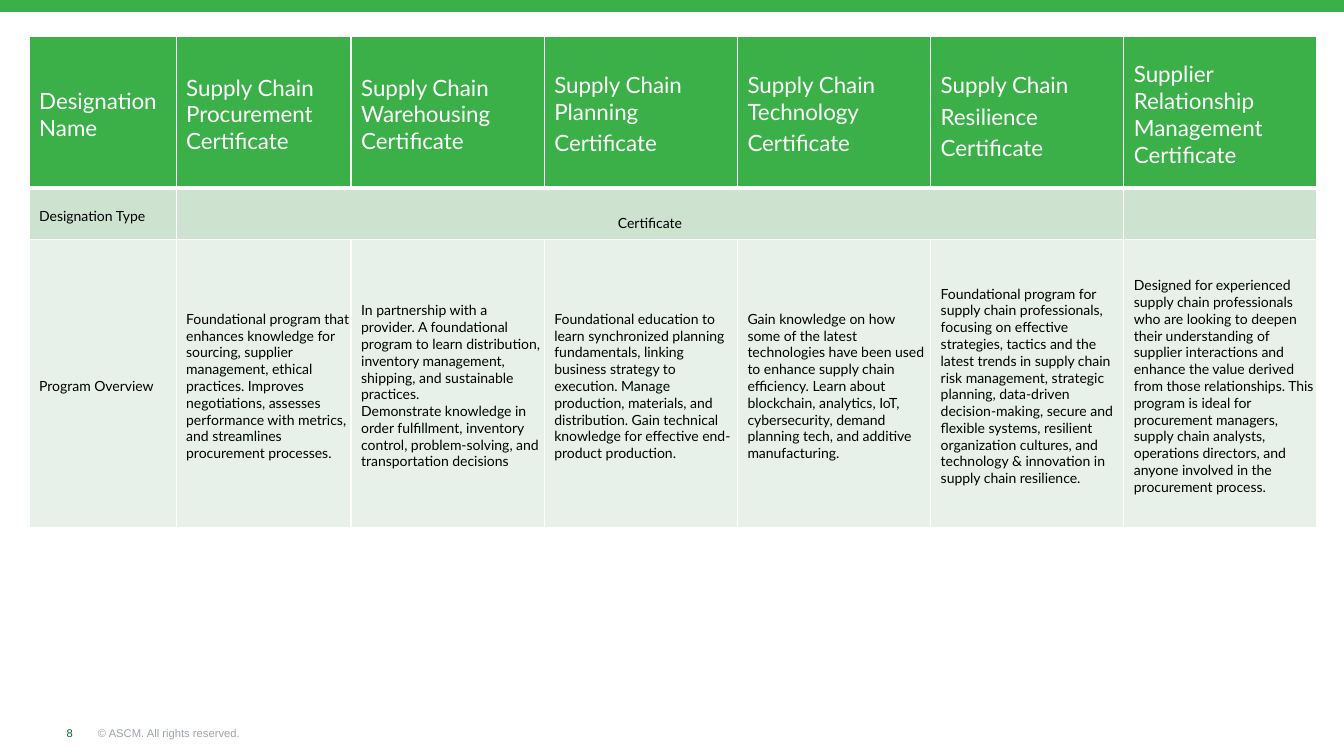
from typing import NamedTuple

from lxml.etree import SubElement
from pptx import Presentation
from pptx.dml.color import RGBColor
from pptx.enum.shapes import MSO_SHAPE
from pptx.enum.text import MSO_ANCHOR, PP_ALIGN
from pptx.oxml.ns import qn
from pptx.util import Pt

GREEN = RGBColor(0x3B, 0xB0, 0x48)
MID_GREEN = RGBColor(0xCE, 0xE3, 0xCF)
PALE_GREEN = RGBColor(0xE8, 0xF1, 0xE9)
DARK_GREEN = RGBColor(0x00, 0x69, 0x36)
GREY = RGBColor(0x9D, 0xA2, 0xB3)
WHITE = RGBColor(0xFF, 0xFF, 0xFF)
BLACK = RGBColor(0x00, 0x00, 0x00)


class Designation(NamedTuple):
    name: str
    overview: str
    width: float = 138
    name_inset: float = 3


class RowStyle(NamedTuple):
    height: float
    fill: RGBColor
    color: RGBColor
    size: float
    top_inset: float
    gap: float
    top_line: float
    bottom_line: float


class FooterText(NamedTuple):
    text: str
    left: float
    width: float
    color: RGBColor


DESIGNATIONS = [
    Designation("Designation Name", "Program Overview", 105),
    Designation(
        "Supply Chain Procurement Certificate",
        "Foundational program that enhances knowledge for sourcing, supplier "
        "management, ethical practices. Improves negotiations, assesses "
        "performance with metrics, and streamlines procurement processes.",
        125),
    Designation(
        "Supply Chain Warehousing Certificate",
        "In partnership with a provider. A foundational program to learn "
        "distribution, inventory management, shipping, and sustainable practices.\n"
        "Demonstrate knowledge in order fulfillment, inventory control, "
        "problem-solving, and transportation decisions"),
    Designation(
        "Supply Chain Planning\nCertificate",
        "Foundational education to learn synchronized planning fundamentals, "
        "linking business strategy to execution. Manage production, materials, "
        "and distribution. Gain technical knowledge for effective end- product "
        "production."),
    Designation(
        "Supply Chain Technology\nCertificate",
        "Gain knowledge on how some of the latest technologies have been used "
        "to enhance supply chain efficiency. Learn about blockchain, analytics, "
        "IoT, cybersecurity, demand planning tech, and additive manufacturing."),
    Designation(
        "Supply Chain\nResilience\nCertificate",
        "Foundational program for supply chain professionals, focusing on "
        "effective strategies, tactics and the latest trends in supply chain "
        "risk management, strategic planning, data-driven decision-making, "
        "secure and flexible systems, resilient organization cultures, and "
        "technology & innovation in supply chain resilience.",
        name_inset=6),
    Designation(
        "Supplier Relationship Management Certificate",
        "Designed for experienced supply chain professionals who are looking "
        "to deepen their understanding of supplier interactions and enhance "
        "the value derived from those relationships. This program is ideal for "
        "procurement managers, supply chain analysts, operations directors, "
        "and anyone involved in the procurement process."),
]
NAME_ROW = RowStyle(108.3, GREEN, WHITE, 16, 3, 3.2, 1, 3)
TYPE_ROW = RowStyle(36.7, MID_GREEN, BLACK, 10, 3.6, 0, 3, 1)
OVERVIEW_ROW = RowStyle(206, PALE_GREEN, BLACK, 10, 3.6, 0, 1, 1)
ROWS = [NAME_ROW, TYPE_ROW, OVERVIEW_ROW]

FOOTER = [
    FooterText("8", 47.6, 10, DARK_GREEN),
    FooterText("© ASCM. All rights reserved.", 70, 110, GREY),
]


def add_borders(cell, row: RowStyle) -> None:
    properties = cell._tc.get_or_add_tcPr()
    widths = {"a:lnL": 1, "a:lnR": 1, "a:lnT": row.top_line, "a:lnB": row.bottom_line}
    for side, width in widths.items():
        line = SubElement(properties, qn(side), w=str(Pt(width)))
        SubElement(SubElement(line, qn("a:solidFill")), qn("a:srgbClr"), val=str(WHITE))


def style_cell(cell, row: RowStyle) -> None:
    add_borders(cell, row)
    cell.fill.solid()
    cell.fill.fore_color.rgb = row.fill
    cell.vertical_anchor = MSO_ANCHOR.MIDDLE
    cell.margin_left, cell.margin_top = Pt(7.2), Pt(row.top_inset)
    cell.margin_right = cell.margin_bottom = Pt(0)


def write_cell(cell, text: str, row: RowStyle) -> None:
    cell.text_frame.text = text
    for index, paragraph in enumerate(cell.text_frame.paragraphs):
        if index:
            paragraph.space_before = Pt(row.gap)
        for run in paragraph.runs:
            font = run.font
            font.name, font.size, font.bold = "Lato", Pt(row.size), False
            font.color.rgb = row.color


def add_certificate_table(slide) -> None:
    width = sum(designation.width for designation in DESIGNATIONS)
    height = sum(row.height for row in ROWS)
    table = slide.shapes.add_table(
        len(ROWS), len(DESIGNATIONS), Pt(20.8), Pt(26), Pt(width), Pt(height)).table
    table.horz_banding = False

    for row_index, row in enumerate(ROWS):
        table.rows[row_index].height = Pt(row.height)
        for cell in table.rows[row_index].cells:
            style_cell(cell, row)

    for column, designation in enumerate(DESIGNATIONS):
        table.columns[column].width = Pt(designation.width)
        name_cell = table.cell(0, column)
        write_cell(name_cell, designation.name, NAME_ROW)
        name_cell.margin_top = Pt(designation.name_inset)
        write_cell(table.cell(2, column), designation.overview, OVERVIEW_ROW)

    # Designation type shared by five certificates
    write_cell(table.cell(1, 0), "Designation Type", TYPE_ROW)
    shared_type = table.cell(1, 1)
    shared_type.merge(table.cell(1, 5))
    write_cell(shared_type, "Certificate", TYPE_ROW)
    shared_type.text_frame.paragraphs[0].alignment = PP_ALIGN.CENTER
    shared_type.margin_left, shared_type.margin_top = Pt(0), Pt(13)


def add_footer_text(slide, item: FooterText) -> None:
    frame = slide.shapes.add_textbox(
        Pt(item.left), Pt(518.6), Pt(item.width), Pt(11)).text_frame
    frame.margin_left = frame.margin_top = frame.margin_right = frame.margin_bottom = Pt(0)
    frame.word_wrap = True
    frame.text = item.text
    font = frame.paragraphs[0].runs[0].font
    font.name, font.size = "Arial", Pt(8)
    font.color.rgb = item.color


def main() -> None:
    deck = Presentation()
    deck.slide_width, deck.slide_height = Pt(960), Pt(540)
    slide = deck.slides.add_slide(deck.slide_layouts[6])

    # Top band
    band = slide.shapes.add_shape(MSO_SHAPE.RECTANGLE, Pt(0), Pt(0), Pt(960), Pt(8.6))
    band.shadow.inherit = False
    band.fill.solid()
    band.fill.fore_color.rgb = GREEN
    band.line.fill.background()

    # Certificates
    add_certificate_table(slide)

    # Footer
    for item in FOOTER:
        add_footer_text(slide, item)

    deck.save("out.pptx")


if __name__ == "__main__":
    main()
